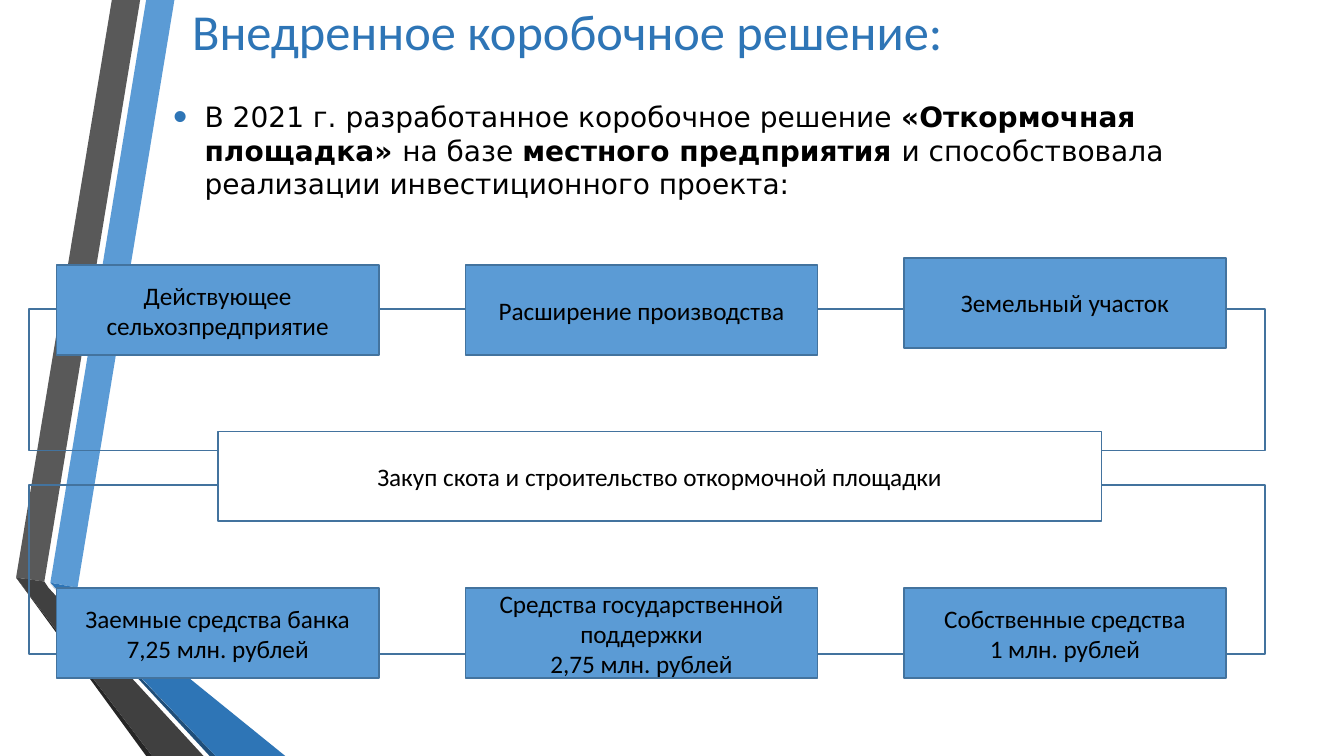
from lxml import etree
from pptx import Presentation
from pptx.dml.color import RGBColor
from pptx.enum.shapes import MSO_SHAPE
from pptx.enum.text import MSO_ANCHOR, PP_ALIGN
from pptx.oxml.ns import qn
from pptx.util import Pt

RECT = MSO_SHAPE.RECTANGLE
TOP, MIDDLE = MSO_ANCHOR.TOP, MSO_ANCHOR.MIDDLE
LEFT, CENTER = PP_ALIGN.LEFT, PP_ALIGN.CENTER
COLORS = {
    "blue": "5B9BD5", "accent": "2E75B6", "navy": "1F4E79", "outline": "43739E",
    "gray": "595959", "dark": "404040", "shade": "262626",
    "white": "FFFFFF", "black": "000000",
}


def write(tf, paragraphs, size=18, font="Calibri", color="black", align=CENTER, anchor=MIDDLE):
    tf.word_wrap = True
    tf.vertical_anchor = anchor
    for i, runs in enumerate(paragraphs):
        p = tf.paragraphs[0] if i == 0 else tf.add_paragraph()
        p.alignment = align
        for text, bold in runs:
            r = p.add_run()
            r.text = text
            r.font.size = Pt(size)
            r.font.name = font
            r.font.bold = bold
            r.font.color.rgb = RGBColor.from_string(COLORS[color])


def add_box(left, top, width, height, fill=None):
    sp = s.shapes.add_shape(RECT, Pt(left), Pt(top), Pt(width), Pt(height))
    sp.shadow.inherit = False
    sp.line.color.rgb = RGBColor.from_string(COLORS["outline"])
    sp.line.width = Pt(1.25)
    if fill:
        sp.fill.solid()
        sp.fill.fore_color.rgb = RGBColor.from_string(COLORS[fill])
    else:
        sp.fill.background()
    return sp


prs = Presentation()
prs.slide_width, prs.slide_height = Pt(960), Pt(540)
s = prs.slides.add_slide(prs.slide_layouts[6])

ribbons = [
    ("blue", [(36, 416.2), (55.4, 419.8), (124.6, 0), (104.4, 0)]),
    ("gray", [(100.1, 0), (79.9, 0), (11.5, 412.6), (31.7, 415.4)]),
    ("shade", [(11.5, 412.6), (104.4, 540), (108.7, 540)]),
    ("navy", [(36, 416.9), (149.8, 540), (154.1, 540)]),
    ("accent", [(36, 416.2), (154.1, 540), (203.8, 540), (55.4, 419.8)]),
    ("dark", [(145.4, 540), (34.6, 419.8), (31.7, 415.4), (11.5, 412.6), (108.7, 540)]),
]
for color, points in ribbons:
    points = [(Pt(x), Pt(y)) for x, y in points]
    fb = s.shapes.build_freeform(*points[0])
    fb.add_line_segments(points[1:], close=True)
    sp = fb.convert_to_shape()
    sp.shadow.inherit = False
    sp.fill.solid()
    sp.fill.fore_color.rgb = RGBColor.from_string(COLORS[color])
    sp.line.fill.background()

title = s.shapes.add_textbox(Pt(-18.7), Pt(-2.9), Pt(848.2), Pt(49.7))
write(title.text_frame, [[("Внедренное коробочное решение:", False)]], size=36, color="accent")

body = s.shapes.add_textbox(Pt(116.6), Pt(67.6), Pt(787), Pt(80))
write(body.text_frame, [[
    ("В 2021 г. разработанное коробочное решение ", False),
    ("«Откормочная площадка» ", True),
    ("на базе ", False),
    ("местного предприятия ", True),
    ("и способствовала реализации инвестиционного проекта:", False),
]], size=20, font="DejaVu Sans", align=LEFT, anchor=TOP)
pPr = body.text_frame.paragraphs[0]._p.get_or_add_pPr()
pPr.set("marL", str(Pt(22.5)))
pPr.set("indent", str(Pt(-22.5)))
buClr = etree.SubElement(pPr, qn("a:buClr"))
etree.SubElement(buClr, qn("a:srgbClr")).set("val", COLORS["accent"])
etree.SubElement(pPr, qn("a:buSzPct")).set("val", "145000")
etree.SubElement(pPr, qn("a:buFont")).set("typeface", "Arial")
etree.SubElement(pPr, qn("a:buChar")).set("char", "•")

for top, height in [(221, 100.8), (346.3, 121)]:
    add_box(20.9, top, 882.7, height)

BOX_HEIGHT = 64.1
NARROW, WIDE = 230.4, 251.3
COL_1, COL_2, COL_3 = 40.3, 332.6, 645.5
boxes = [
    (COL_1, 189.4, NARROW, "blue", ["Действующее сельхозпредприятие"]),
    (COL_2, 189.4, WIDE, "blue", ["Расширение производства"]),
    (COL_3, 184.3, NARROW, "blue", ["Земельный участок"]),
    (155.5, 308.2, 631.4, "white", ["Закуп скота и строительство откормочной площадки"]),
    (COL_1, 420.2, NARROW, "blue", ["Заемные средства банка", "7,25 млн. рублей"]),
    (COL_2, 420.2, WIDE, "blue", ["Средства государственной поддержки", "2,75 млн. рублей"]),
    (COL_3, 420.2, NARROW, "blue", ["Собственные средства", "1 млн. рублей"]),
]
for left, top, width, fill, lines in boxes:
    sp = add_box(left, top, width, BOX_HEIGHT, fill)
    write(sp.text_frame, [[(line, False)] for line in lines])

prs.save("out.pptx")
